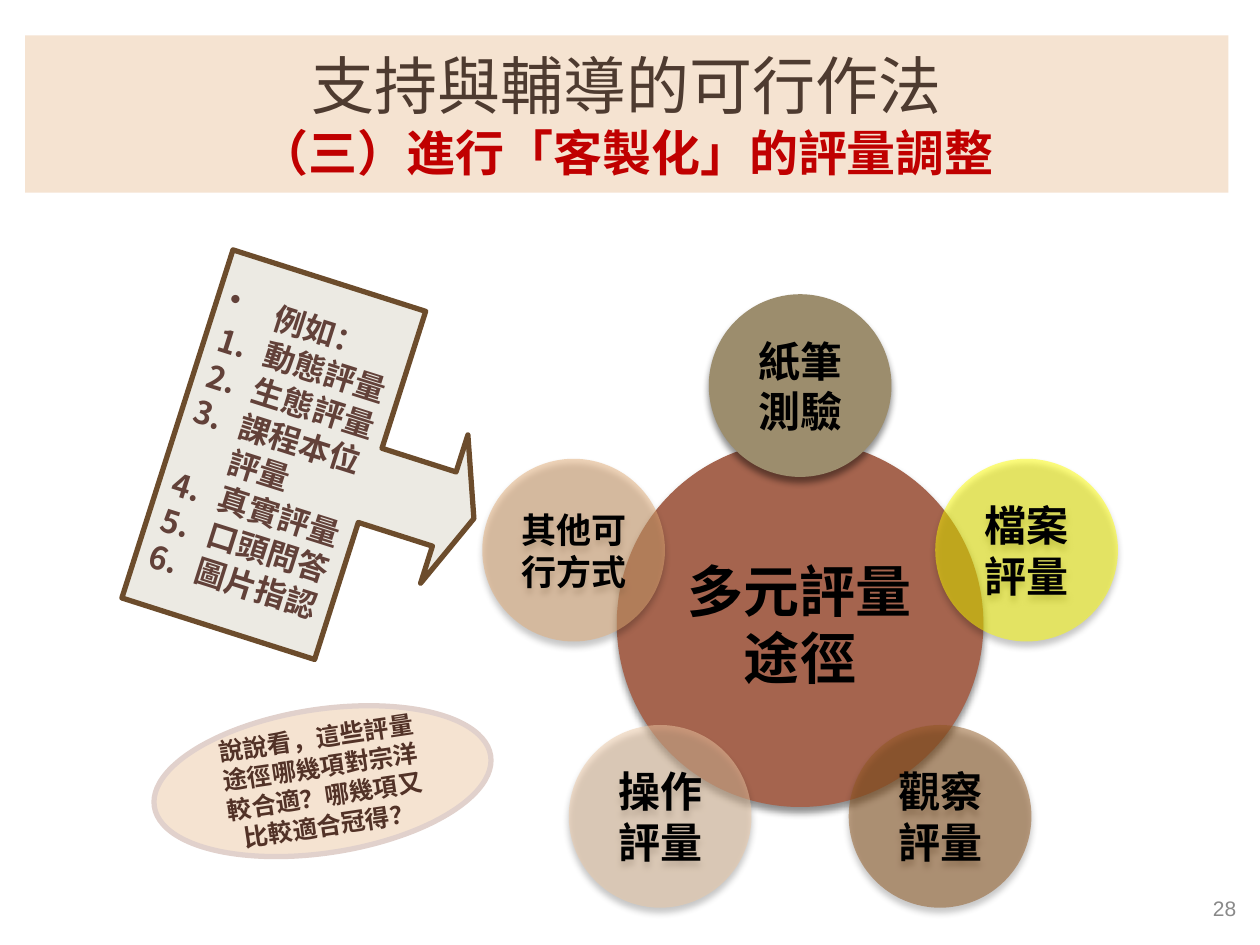
from dataclasses import dataclass
from math import cos, radians, sin

from lxml.etree import SubElement
from pptx import Presentation
from pptx.dml.color import RGBColor
from pptx.enum.shapes import MSO_SHAPE
from pptx.enum.text import MSO_ANCHOR, PP_ALIGN
from pptx.oxml.ns import qn
from pptx.shapes.autoshape import Shape
from pptx.slide import Slide
from pptx.text.text import _Paragraph as Paragraph
from pptx.util import Inches, Pt

BLACK = RGBColor(0x00, 0x00, 0x00)
GRAY = RGBColor(0x89, 0x89, 0x89)
RED = RGBColor(0xC0, 0x00, 0x00)
CREAM = RGBColor(0xF5, 0xE3, 0xD1)
TITLE_BROWN = RGBColor(0x4E, 0x3B, 0x30)
CALLOUT_FILL = RGBColor(0xEC, 0xEA, 0xE3)
CALLOUT_LINE = RGBColor(0x6C, 0x4C, 0x2C)
CALLOUT_TEXT = RGBColor(0x62, 0x41, 0x39)
QUESTION_LINE = RGBColor(0xE1, 0xD1, 0xCC)
QUESTION_TEXT = RGBColor(0x52, 0x32, 0x27)
RUST = RGBColor(0xA5, 0x64, 0x4E)
OLIVE = RGBColor(0x9C, 0x8D, 0x6D)
YELLOW = RGBColor(0xFF, 0xFF, 0x00)
BROWN = RGBColor(0x91, 0x58, 0x1F)
PEACH = RGBColor(0xEC, 0xC8, 0xA4)
ORANGE = RGBColor(0xE2, 0xAC, 0x76)

CJK_FONT = "Noto Sans CJK SC"
HUB_X, HUB_Y = 6.35, 4.95
HUB_DIAMETER = 2.91
SATELLITE_DIAMETER = 1.45
ORBIT_RADIUS = 1.89


@dataclass
class Circle:
    text: str
    color: RGBColor
    size: int = 24
    opacity: int = 50


@dataclass
class ListItem:
    text: str
    centered: bool = True
    numbered: bool = True


HUB = Circle("多元評量途徑", RUST, 32, 100)
SATELLITES = [  # clockwise from the top
    Circle("紙筆測驗", OLIVE, opacity=100),
    Circle("檔案評量", YELLOW),
    Circle("觀察評量", BROWN),
    Circle("操作評量", PEACH),
    Circle("其他可行方式", ORANGE, 20),
]
EXAMPLES = [
    ListItem("例如：", centered=False, numbered=False),
    ListItem("動態評量"),
    ListItem("生態評量"),
    ListItem("課程本位評量", centered=False),
    ListItem("真實評量"),
    ListItem("口頭問答"),
    ListItem("圖片指認"),
]


def style_paragraph(paragraph: Paragraph, size: int, color: RGBColor,
                    font: str = "Arial", bold: bool = True,
                    alignment: PP_ALIGN = PP_ALIGN.CENTER) -> None:
    paragraph.alignment = alignment
    paragraph.font.size = Pt(size)
    paragraph.font.bold = bold
    paragraph.font.name = font
    paragraph.font.color.rgb = color


def add_filled_shape(slide: Slide, kind: MSO_SHAPE, left: float, top: float,
                     width: float, height: float, fill: RGBColor) -> Shape:
    shape = slide.shapes.add_shape(
        kind, Inches(left), Inches(top), Inches(width), Inches(height))
    shape.shadow.inherit = False
    shape.fill.solid()
    shape.fill.fore_color.rgb = fill
    shape.line.fill.background()
    shape.text_frame.word_wrap = True
    shape.text_frame.vertical_anchor = MSO_ANCHOR.MIDDLE
    return shape


def set_outline(shape: Shape, color: RGBColor) -> None:
    shape.line.color.rgb = color
    shape.line.width = Pt(3)


def set_opacity(shape: Shape, percent: int) -> None:
    color = shape.fill._xPr.find(qn("a:solidFill"))[0]
    SubElement(color, qn("a:alpha"), val=str(percent * 1000))


def add_drop_shadow(shape: Shape) -> None:
    effects = shape._element.spPr.find(qn("a:effectLst"))
    shadow = SubElement(effects, qn("a:outerShdw"), blurRad=str(Pt(4)),
                        dist=str(Pt(3)), dir="5400000", rotWithShape="0")
    color = SubElement(shadow, qn("a:srgbClr"), val=str(BLACK))
    SubElement(color, qn("a:alpha"), val="43000")


def add_circle(slide: Slide, circle: Circle, center_x: float, center_y: float,
               diameter: float) -> None:
    shape = add_filled_shape(
        slide, MSO_SHAPE.OVAL, center_x - diameter / 2,
        center_y - diameter / 2, diameter, diameter, circle.color)
    if circle.opacity < 100:
        set_opacity(shape, circle.opacity)
    add_drop_shadow(shape)
    frame = shape.text_frame
    frame.margin_left = frame.margin_right = Inches(0.03)
    frame.margin_top = frame.margin_bottom = Inches(0.03)
    frame.text = circle.text
    style_paragraph(frame.paragraphs[0], circle.size, BLACK)


def add_bullet(paragraph: Paragraph, numbered: bool) -> None:
    properties = paragraph._p.get_or_add_pPr()
    properties.set("marL", str(Inches(0.38)))
    properties.set("indent", str(-Inches(0.38)))
    if numbered:
        bullet = SubElement(properties, qn("a:buAutoNum"), type="arabicPeriod")
    else:
        bullet = SubElement(properties, qn("a:buChar"), char="•")
    properties.find(qn("a:defRPr")).addprevious(bullet)


def add_title(slide: Slide) -> None:
    title = slide.shapes.title
    title.left, title.top = Inches(0.2), Inches(0.28)
    title.width, title.height = Inches(9.55), Inches(1.25)
    title.fill.solid()
    title.fill.fore_color.rgb = CREAM
    title.text_frame.vertical_anchor = MSO_ANCHOR.MIDDLE
    paragraph = title.text_frame.paragraphs[0]
    style_paragraph(paragraph, 36, TITLE_BROWN, bold=False)
    paragraph.add_run().text = "支持與輔導的可行作法"
    paragraph.add_line_break()
    subtitle = paragraph.add_run()
    subtitle.text = "（三）進行「客製化」的評量調整"
    subtitle.font.size = Pt(28)
    subtitle.font.bold = True
    subtitle.font.name = "Montserrat"
    subtitle.font.color.rgb = RED


def add_assessment_diagram(slide: Slide) -> None:
    add_circle(slide, HUB, HUB_X, HUB_Y, HUB_DIAMETER)
    for index, satellite in enumerate(SATELLITES):
        angle = radians(index * 360 / len(SATELLITES))
        add_circle(slide, satellite, HUB_X + ORBIT_RADIUS * sin(angle),
                   HUB_Y - ORBIT_RADIUS * cos(angle), SATELLITE_DIAMETER)


def add_examples(slide: Slide) -> None:
    callout = add_filled_shape(slide, MSO_SHAPE.RIGHT_ARROW_CALLOUT,
                               1.35, 2.29, 2.47, 2.9, CALLOUT_FILL)
    for index, value in enumerate((0.25, 0.25, 0.1, 0.65)):
        callout.adjustments[index] = value
    callout.rotation = 17.7
    set_outline(callout, CALLOUT_LINE)
    frame = callout.text_frame
    frame.text = "\n".join(item.text for item in EXAMPLES)
    for paragraph, item in zip(frame.paragraphs, EXAMPLES):
        alignment = PP_ALIGN.CENTER if item.centered else PP_ALIGN.LEFT
        style_paragraph(paragraph, 18, CALLOUT_TEXT, CJK_FONT,
                        alignment=alignment)
        add_bullet(paragraph, item.numbered)


def add_question(slide: Slide) -> None:
    question = add_filled_shape(slide, MSO_SHAPE.OVAL,
                                1.21, 5.63, 2.7, 1.14, CREAM)
    question.rotation = 351.4
    set_outline(question, QUESTION_LINE)
    question.text_frame.text = "說說看，這些評量途徑哪幾項對宗洋較合適？哪幾項又比較適合冠得？"
    style_paragraph(question.text_frame.paragraphs[0], 14, QUESTION_TEXT, CJK_FONT)


def add_page_number(slide: Slide) -> None:
    box = slide.shapes.add_textbox(Inches(9.41), Inches(6.97), Inches(0.5), Inches(0.48))
    box.text_frame.word_wrap = True
    box.text_frame.vertical_anchor = MSO_ANCHOR.MIDDLE
    box.text_frame.text = "28"
    style_paragraph(box.text_frame.paragraphs[0], 12, GRAY, bold=False, alignment=PP_ALIGN.RIGHT)


def main() -> None:
    presentation = Presentation()
    presentation.slide_width, presentation.slide_height = Inches(10), Inches(7.5)
    slide = presentation.slides.add_slide(presentation.slide_layouts[5])
    for add_part in (add_title, add_page_number, add_assessment_diagram,
                     add_examples, add_question):
        add_part(slide)
    presentation.save("out.pptx")


if __name__ == "__main__":
    main()
